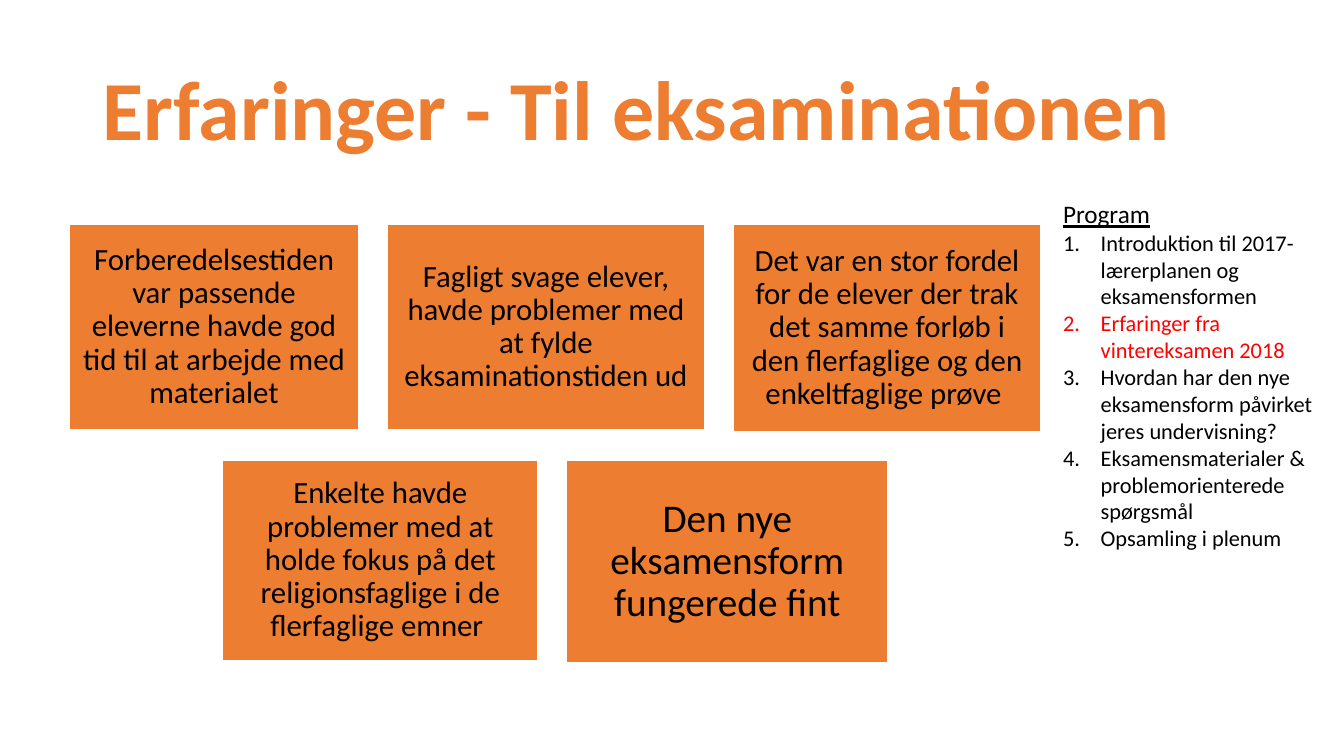
from lxml import etree
from pptx import Presentation
from pptx.dml.color import RGBColor
from pptx.enum.shapes import MSO_SHAPE
from pptx.enum.text import MSO_ANCHOR, MSO_AUTO_SIZE, PP_ALIGN
from pptx.oxml.ns import qn
from pptx.util import Cm, Pt

RECT = MSO_SHAPE.RECTANGLE
MIDDLE = MSO_ANCHOR.MIDDLE
GROW = MSO_AUTO_SIZE.SHAPE_TO_FIT_TEXT
NO_FIT = MSO_AUTO_SIZE.NONE
LEFT, CENTER = PP_ALIGN.LEFT, PP_ALIGN.CENTER
ORANGE, BLACK, RED, WHITE = "ED7D31", "000000", "FF0000", "FFFFFF"
GAP = 0.72


def color(code):
    return RGBColor.from_string(code)


def style(par, size, code):
    """Set the font of every run in a paragraph."""
    for run in par.runs:
        run.font.name = "Calibri"
        run.font.size = Pt(size)
        run.font.color.rgb = color(code)


prs = Presentation()
prs.slide_width, prs.slide_height = Cm(33.87), Cm(19.05)
slide = prs.slides.add_slide(prs.slide_layouts[5])

# Title
title = slide.shapes.title
title.left, title.top = Cm(2.34), Cm(1.02)
title.width, title.height = Cm(30.43), Cm(3.68)
frame = title.text_frame
frame.text = "Erfaringer - Til eksaminationen"
frame.vertical_anchor = MIDDLE
frame.auto_size = NO_FIT
par = frame.paragraphs[0]
par.alignment = LEFT
par.line_spacing = 0.9
style(par, 60, ORANGE)
par.runs[0].font.bold = True

# Experience boxes: each row is left, top, then (width, height, size, text)
rows = [
    (1.75, 5.66, [
        (7.29, 5.16, 22, "Forberedelsestiden var passende eleverne havde god "
                         "tid til at arbejde med materialet"),
        (8.0, 5.16, 22, "Fagligt svage elever, havde problemer med at fylde "
                        "eksaminationstiden ud"),
        (7.75, 5.21, 22, "Det var en stor fordel for de elever der trak det "
                         "samme forløb i den flerfaglige og den "
                         "enkeltfaglige prøve "),
    ]),
    (5.61, 11.6, [
        (7.95, 5.05, 22, "Enkelte havde problemer med at holde fokus på det "
                         "religionsfaglige i de flerfaglige emner "),
        (8.1, 5.11, 28, "Den nye eksamensform fungerede fint"),
    ]),
]
for left, top, boxes in rows:
    for width, height, size, text in boxes:
        box = slide.shapes.add_shape(RECT, Cm(left), Cm(top),
                                     Cm(width), Cm(height))
        box.shadow.inherit = False
        box.fill.solid()
        box.fill.fore_color.rgb = color(ORANGE)
        box.line.color.rgb = color(WHITE)
        box.line.width = Pt(1)
        frame = box.text_frame
        frame.word_wrap = True
        frame.vertical_anchor = MIDDLE
        inset = Cm(size * 0.0106)
        frame.margin_left = frame.margin_right = inset
        frame.margin_top = frame.margin_bottom = inset
        frame.text = text
        par = frame.paragraphs[0]
        par.alignment = CENTER
        par.line_spacing = 0.9
        style(par, size, BLACK)
        left += width + GAP

# Program list
items = [
    ("Introduktion til 2017-lærerplanen og eksamensformen", BLACK),
    ("Erfaringer fra vintereksamen 2018", RED),
    ("Hvordan har den nye eksamensform påvirket jeres undervisning?", BLACK),
    ("Eksamensmaterialer & problemorienterede spørgsmål", BLACK),
    ("Opsamling i plenum", BLACK),
]
plan = slide.shapes.add_textbox(Cm(26.54), Cm(4.88), Cm(6.83), Cm(9.14))
frame = plan.text_frame
frame.word_wrap = True
frame.auto_size = GROW
frame.text = "Program"
head = frame.paragraphs[0]
style(head, 18, BLACK)
head.runs[0].font.underline = True
for text, code in items:
    par = frame.add_paragraph()
    par.text = text
    style(par, 16, code)
    props = par._p.get_or_add_pPr()
    props.set("marL", str(Cm(0.95)))
    props.set("indent", str(-Cm(0.95)))
    etree.SubElement(props, qn("a:buFont"), typeface="+mj-lt")
    etree.SubElement(props, qn("a:buAutoNum"), type="arabicPeriod")

prs.save("out.pptx")
